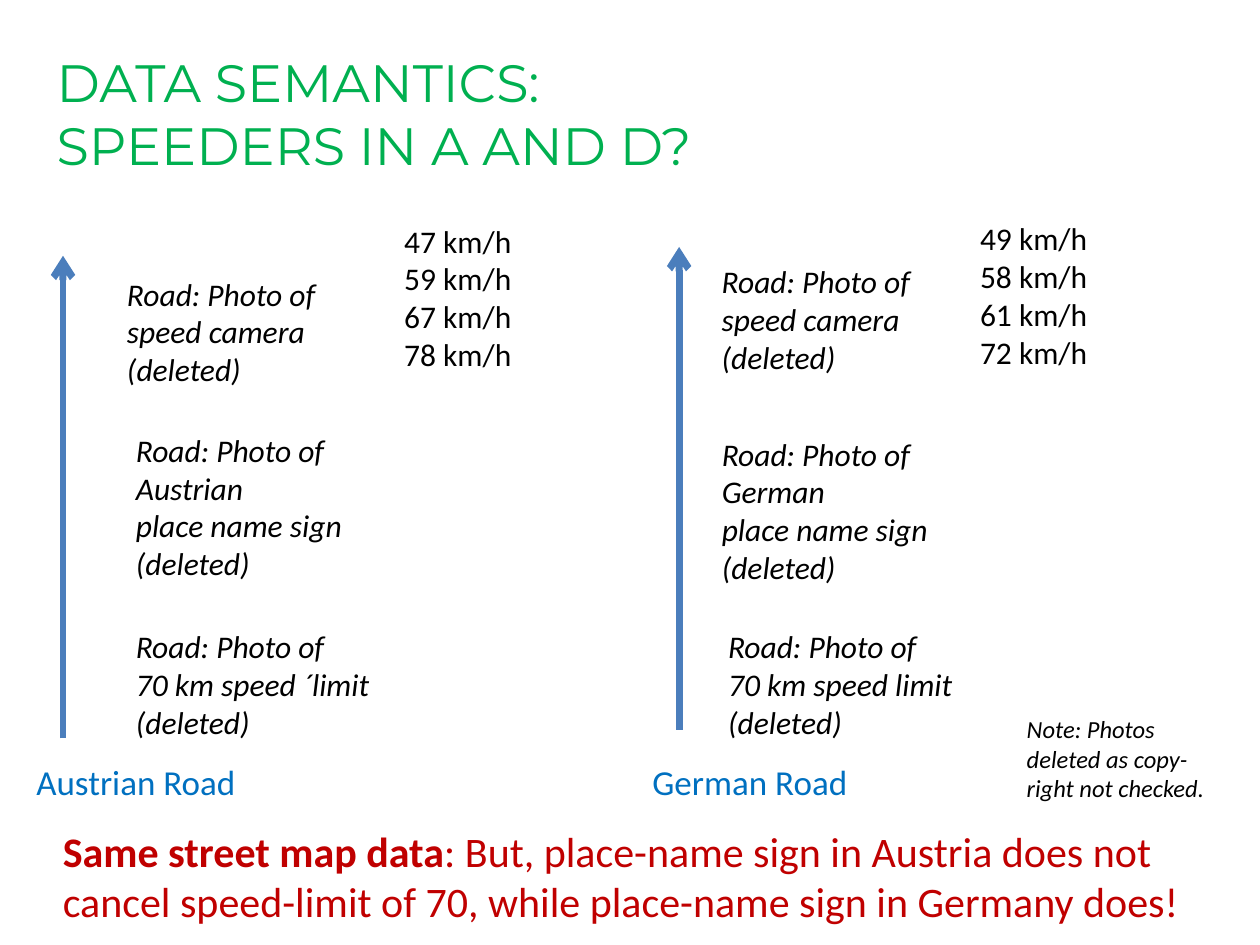
from lxml import etree
from pptx import Presentation
from pptx.dml.color import RGBColor
from pptx.enum.shapes import MSO_CONNECTOR
from pptx.enum.text import MSO_ANCHOR, MSO_AUTO_SIZE, PP_ALIGN
from pptx.oxml.ns import qn
from pptx.util import Pt

PX = 9144  # 100 px to the inch
STRAIGHT = MSO_CONNECTOR.STRAIGHT
LEFT, BOTTOM = PP_ALIGN.LEFT, MSO_ANCHOR.BOTTOM
NO_FIT, GROW = MSO_AUTO_SIZE.NONE, MSO_AUTO_SIZE.SHAPE_TO_FIT_TEXT

GREEN = RGBColor(0x00, 0xB0, 0x50)
BLACK = RGBColor(0x00, 0x00, 0x00)
RED = RGBColor(0xC0, 0x00, 0x00)
BLUE = RGBColor(0x00, 0x70, 0xC0)
ARROW_BLUE = RGBColor(0x4B, 0x7E, 0xBC)

SPEED = {"name": "Calibri", "size": Pt(18)}
PHOTO = {"name": "Calibri", "size": Pt(18), "italic": True}
ROAD = {"name": "Calibri", "size": Pt(20)}
NOTE = {"name": "Calibri", "size": Pt(14), "italic": True}
MESSAGE = {"name": "Calibri", "size": Pt(24)}
TITLE = {"name": "Montserrat", "size": Pt(30), "bold": False}


def format_font(font, values, color):
    for name, value in values.items():
        setattr(font, name, value)
    font.color.rgb = color


def add_text(slide, box, text, values, color=BLACK, wrap=False):
    """Newlines start paragraphs; vertical tabs break lines within one."""
    shape = slide.shapes.add_textbox(*(value * PX for value in box))
    frame = shape.text_frame
    frame.word_wrap = wrap
    frame.auto_size = GROW
    frame.text = text
    for paragraph in frame.paragraphs:
        for run in paragraph.runs:
            format_font(run.font, values, color)
    return shape


presentation = Presentation()
presentation.slide_width = 1000 * PX
presentation.slide_height = 750 * PX
slide = presentation.slides.add_slide(presentation.slide_layouts[5])

# Title
title = slide.shapes.title
title.left, title.top, title.width, title.height = (
    value * PX for value in (35, 36, 693, 109))
frame = title.text_frame
frame.text = "DATA SEMANTICS: \vSPEEDERS IN A AND D?"
frame.auto_size = NO_FIT
frame.vertical_anchor = BOTTOM
paragraph = frame.paragraphs[0]
paragraph.alignment = LEFT
for run in paragraph.runs:
    format_font(run.font, TITLE, GREEN)

# Measured speeds, photo captions and road names
texts = [
    ((311, 171, 110, 131), "47 km/h\n59 km/h\n67 km/h\v78 km/h", SPEED, BLACK, True),
    ((768, 169, 134, 131), "49 km/h\n58 km/h\n61 km/h\v72 km/h", SPEED, BLACK, True),
    ((91, 213, 177, 101), "Road: Photo of \vspeed camera\v(deleted)", PHOTO),
    ((563, 203, 177, 101), "Road: Photo of \vspeed camera\v(deleted)", PHOTO),
    ((98, 337, 185, 131),
     "Road: Photo of \vAustrian\vplace name sign\v(deleted)", PHOTO),
    ((563, 340, 185, 134),
     "Road: Photo of \vGerman\vplace name sign\v(deleted)", PHOTO),
    ((98, 493, 210, 101), "Road: Photo of\n70 km speed ´limit\v(deleted)", PHOTO),
    ((568, 493, 202, 101), "Road: Photo of\n70 km speed limit\n(deleted)", PHOTO),
    ((19, 599, 186, 44), "Austrian Road", ROAD, BLUE),
    ((508, 599, 176, 44), "German Road", ROAD, BLUE),
    ((805, 562, 162, 81),
     "Note: Photos\vdeleted as copy-\nright not checked.", NOTE),
]
for text in texts:
    add_text(slide, *text)

# Driving direction arrows
for x, bottom in ((50, 586), (539, 579)):
    arrow = slide.shapes.add_connector(
        STRAIGHT, x * PX, bottom * PX, x * PX, (bottom - 383) * PX)
    arrow.line.color.rgb = ARROW_BLUE
    arrow.line.width = Pt(4)
    etree.SubElement(arrow.line._get_or_add_ln(), qn("a:tailEnd"), type="arrow")
    etree.SubElement(arrow._element.spPr, qn("a:effectLst"))

# Conclusion with bold lead-in
conclusion = add_text(slide, (40, 650, 911, 91), "Same street map data",
                      MESSAGE, RED, wrap=True)
paragraph = conclusion.text_frame.paragraphs[0]
paragraph.runs[0].font.bold = True
run = paragraph.add_run()
run.text = (": But, place-name sign in Austria does not cancel speed-limit of 70, "
            "while place-name sign in Germany does!")
format_font(run.font, MESSAGE, RED)

presentation.save("out.pptx")
